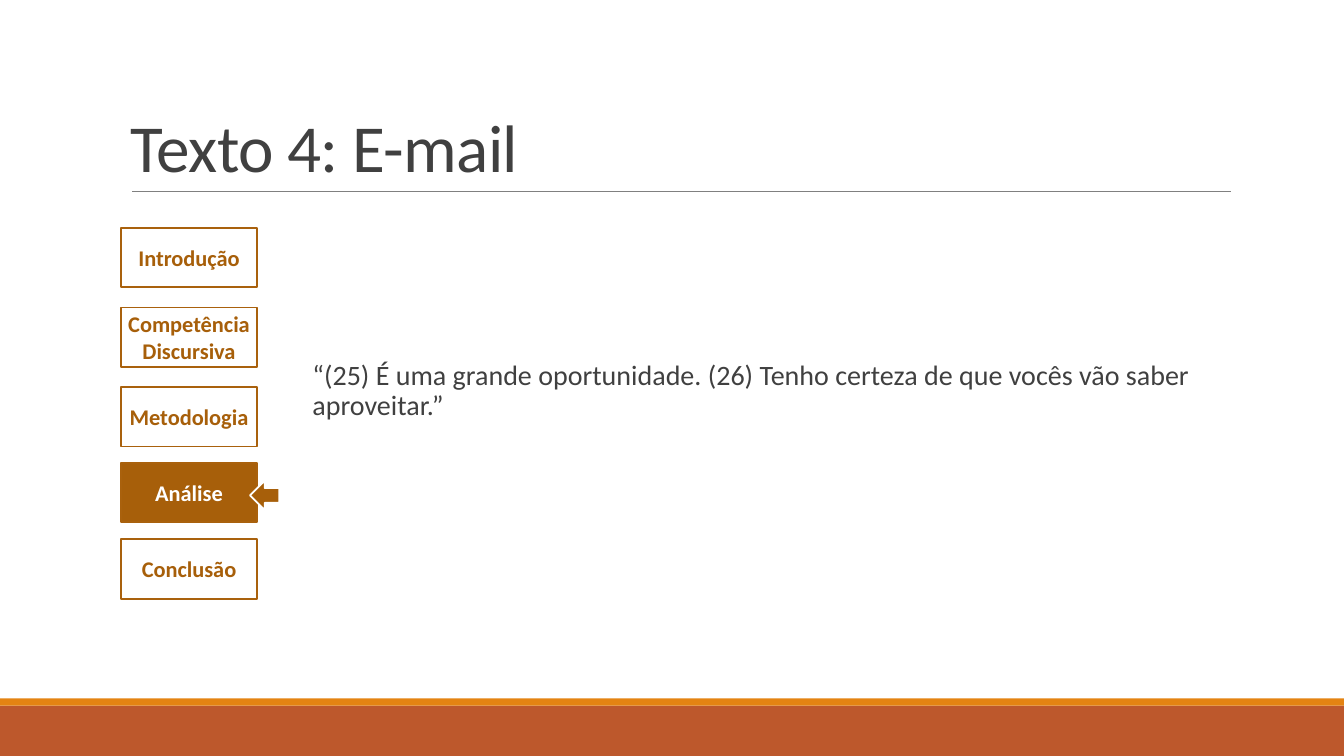
import pptx
import pptx.dml.color
import pptx.enum.shapes
import pptx.enum.text
import pptx.oxml
import pptx.oxml.ns
import pptx.util

Inches = pptx.util.Inches
Pt = pptx.util.Pt
RGBColor = pptx.dml.color.RGBColor
MSO_SHAPE = pptx.enum.shapes.MSO_SHAPE
MSO_ANCHOR = pptx.enum.text.MSO_ANCHOR
PP_ALIGN = pptx.enum.text.PP_ALIGN

WHITE = RGBColor(0xFF, 0xFF, 0xFF)
RUST = RGBColor(0xBD, 0x58, 0x2C)
ORANGE = RGBColor(0xE4, 0x83, 0x12)
BROWN = RGBColor(0xA7, 0x5F, 0x0A)
OUTLINE = RGBColor(0xA9, 0x61, 0x0D)
GREY = RGBColor(0x80, 0x80, 0x80)
TEXT = RGBColor(0x40, 0x40, 0x40)

FONT = "Calibri"
SECTIONS = [
    ("Introdução", 0),
    ("Competência Discursiva", 0.79),
    ("Metodologia", 1.58),
    ("Análise", 2.33),
    ("Conclusão", 3.09),
]
CURRENT = "Análise"
QUOTE = ("“(25) É uma grande oportunidade. (26) Tenho certeza de que vocês "
         "vão saber aproveitar.”")


def add_box(s, kind, x, y, w, h, fill=None, line=None):
    sp = s.shapes.add_shape(kind, Inches(x), Inches(y), Inches(w), Inches(h))
    sp.shadow.inherit = False
    if fill is None:
        sp.fill.background()
    else:
        sp.fill.solid()
        sp.fill.fore_color.rgb = fill
    if line is None:
        sp.line.fill.background()
    else:
        sp.line.color.rgb = line
        sp.line.width = Pt(1.25)
    return sp


def set_text(sp, text, size, color, insets, anchor, align=PP_ALIGN.LEFT, bold=False):
    tf = sp.text_frame
    tf.word_wrap = True
    tf.vertical_anchor = anchor
    tf.margin_left, tf.margin_top, tf.margin_right, tf.margin_bottom = map(Inches, insets)
    p = tf.paragraphs[0]
    p.alignment = align
    p.font.name = FONT
    p.font.size = Pt(size)
    p.font.bold = bold
    p.font.color.rgb = color
    r = p.add_run()
    r.text = text
    return p


def add_footer(s, x, y, w, h):
    stripe = 0.07
    add_box(s, MSO_SHAPE.RECTANGLE, x, y + stripe, w, h - stripe, RUST)
    add_box(s, MSO_SHAPE.RECTANGLE, x, y, w, stripe, ORANGE)


def add_title(s, x, y, w, h):
    rule = s.shapes.add_connector(
        pptx.enum.shapes.MSO_CONNECTOR.STRAIGHT,
        Inches(x + 0.11), Inches(y + h), Inches(x + w + 0.01), Inches(y + h))
    rule.line.color.rgb = GREY
    rule.line.width = Pt(0.5)
    rule._element.spPr.append(pptx.oxml.parse_xml(
        "<a:effectLst %s/>" % pptx.oxml.ns.nsdecls("a")))
    sp = s.shapes.add_textbox(Inches(x), Inches(y), Inches(w), Inches(h))
    p = set_text(sp, "Texto 4: E-mail", 48, TEXT, (0.1, 0.05, 0.1, 0.05), MSO_ANCHOR.BOTTOM)
    p.line_spacing = 0.85
    p.runs[0]._r.get_or_add_rPr().set("spc", "-50")


def add_sections(s, x, y, w, h):
    for name, offset in SECTIONS:
        active = name == CURRENT
        top = y + offset
        sp = add_box(s, MSO_SHAPE.RECTANGLE, x, top, w, h, BROWN if active else None, OUTLINE)
        set_text(sp, name, 16, WHITE if active else BROWN, (0.02, 0, 0.02, 0),
                 MSO_ANCHOR.MIDDLE, PP_ALIGN.CENTER, True)
        if active:
            arrow = top + 0.18
    add_box(s, MSO_SHAPE.LEFT_ARROW, x + w - 0.07, arrow, 0.29, 0.29, BROWN, WHITE)


def add_quote(s, x, y, w, h):
    sp = s.shapes.add_textbox(Inches(x), Inches(y), Inches(w), Inches(h))
    p = set_text(sp, QUOTE, 20, TEXT, (0.1, 1.56, 0, 0.05), MSO_ANCHOR.TOP)
    p.line_spacing = 0.9


def main():
    prs = pptx.Presentation()
    prs.slide_width = Inches(13.33)
    prs.slide_height = Inches(7.5)
    s = prs.slides.add_slide(prs.slide_layouts[6])
    add_footer(s, 0, 6.93, 13.33, 0.57)
    add_title(s, 1.2, 0.31, 11, 1.59)
    add_sections(s, 1.2, 2.26, 1.35, 0.59)
    add_quote(s, 3, 2.02, 9.2, 4.4)
    prs.save("out.pptx")


if __name__ == "__main__":
    main()
